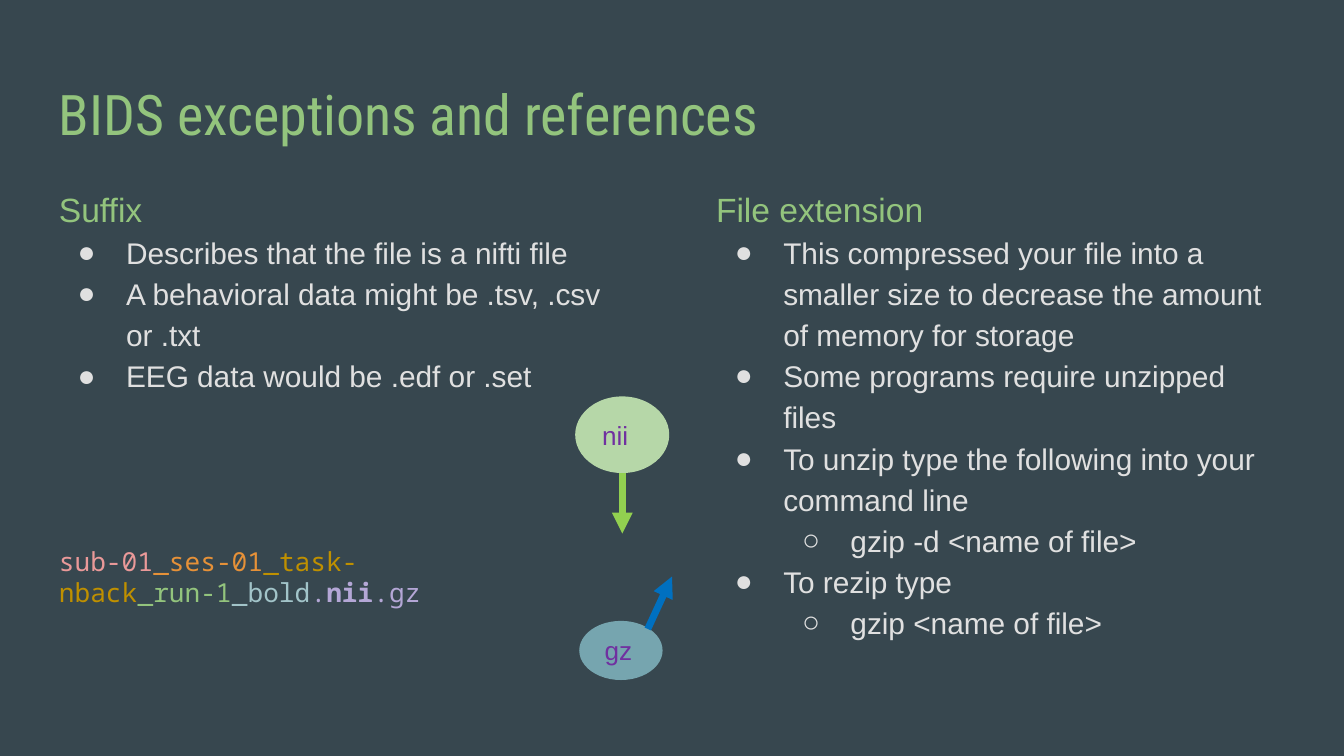
from lxml import etree
from pptx import Presentation
from pptx.dml.color import RGBColor
from pptx.enum.shapes import MSO_CONNECTOR, MSO_SHAPE
from pptx.enum.text import MSO_ANCHOR, PP_ALIGN
from pptx.oxml.ns import qn
from pptx.util import Inches, Pt

COLORS = {
    "background": "37474F", "heading": "93C47D", "body": "E0E0E0",
    "nii": "B6D7A8", "gz": "76A5AF", "label": "7030A0",
    "nii_arrow": "92D050", "gz_arrow": "0070C0",
    "subject": "EA9999", "session": "E69138", "task": "BF9000",
    "run": "93C47D", "suffix": "A2C4C9", "extension": "B4A7D6",
}


def style(font, size, color, name="Arial"):
    font.size = Pt(size)
    font.name = name
    font.color.rgb = RGBColor.from_string(COLORS[color])


def add_text_frame(left, top, width, height, margin=0.1):
    box = slide.shapes.add_textbox(Inches(left), Inches(top), Inches(width), Inches(height))
    frame = box.text_frame
    frame.word_wrap = True
    frame.margin_top = frame.margin_bottom = Inches(margin)
    return frame


prs = Presentation()
prs.slide_width = Inches(10)
prs.slide_height = Inches(10) * 9 // 16
slide = prs.slides.add_slide(prs.slide_layouts[6])
slide.background.fill.solid()
slide.background.fill.fore_color.rgb = RGBColor.from_string(COLORS["background"])

title = add_text_frame(0.34, 0.49, 9.32, 0.63).paragraphs[0]
title.text = "BIDS exceptions and references"
style(title.font, 30, "heading", "Roboto Condensed")

bubbles = [
    ("nii", 4.28, 2.95, 0.7, 0.57, (4.63, 3.52), (4.63, 3.97)),
    ("gz", 4.31, 4.62, 0.62, 0.44, (4.82, 4.68), (5, 4.29)),
]
for wording, left, top, width, height, start, end in bubbles:
    bubble = slide.shapes.add_shape(
        MSO_SHAPE.OVAL, Inches(left), Inches(top), Inches(width), Inches(height))
    bubble.shadow.inherit = False
    bubble.fill.solid()
    bubble.fill.fore_color.rgb = RGBColor.from_string(COLORS[wording])
    bubble.line.fill.background()
    frame = bubble.text_frame
    frame.margin_top = frame.margin_bottom = Inches(0.1)
    frame.vertical_anchor = MSO_ANCHOR.MIDDLE
    label = frame.paragraphs[0]
    label.text = wording
    label.alignment = PP_ALIGN.LEFT
    style(label.font, 14, "label")

    arrow = slide.shapes.add_connector(
        MSO_CONNECTOR.STRAIGHT, *(Inches(value) for value in start + end))
    arrow.line.width = Pt(3.75)
    arrow.line.color.rgb = RGBColor.from_string(COLORS[wording + "_arrow"])
    outline = arrow._element.spPr.find(qn("a:ln"))
    etree.SubElement(outline, qn("a:tailEnd"), type="triangle")
    etree.SubElement(arrow._element.spPr, qn("a:effectLst"))

filename = add_text_frame(0.34, 4.01, 5.01, 0.57, margin=0.05).paragraphs[0]
for wording, part, bold in [
    ("sub-01", "subject", False), ("_ses-01", "session", False),
    ("_task-nback", "task", False), ("_run-1", "run", False),
    ("_bold", "suffix", False), (".", "extension", False),
    ("nii", "extension", True), (".gz", "extension", False),
]:
    entity = filename.add_run()
    entity.text = wording
    entity.font.bold = bold
    style(entity.font, 14, part, "Noto Sans Mono")

columns = [
    (5.23, 4.43, 3.74, "File extension", [
        (0, "This compressed your file into a smaller size to decrease the amount of memory for storage"),
        (0, "Some programs require unzipped files"),
        (0, "To unzip type the following into your command line"),
        (1, "gzip -d <name of file>"),
        (0, "To rezip type"),
        (1, "gzip <name of file>"),
    ]),
    (0.34, 4.37, 1.95, "Suffix", [
        (0, "Describes that the file is a nifti file"),
        (0, "A behavioral data might be .tsv, .csv or .txt"),
        (0, "EEG data would be .edf or .set"),
    ]),
]
for left, width, height, heading_text, points in columns:
    column = add_text_frame(left, 1.26, width, height)
    heading = column.paragraphs[0]
    heading.text = heading_text
    heading.line_spacing = 1.15
    style(heading.font, 18, "heading")
    for level, wording in points:
        point = column.add_paragraph()
        point.text = wording
        point.level = level
        point.line_spacing = 1.15
        style(point.font, 16, "body")
        properties = point._p.get_or_add_pPr()
        properties.set("marL", str(Inches(0.5 * (level + 1))))
        properties.set("indent", str(Inches(-0.36)))
        bullet_color = etree.Element(qn("a:buClr"))
        etree.SubElement(bullet_color, qn("a:srgbClr"), val=COLORS["body"])
        for bullet_part in (
            bullet_color,
            etree.Element(qn("a:buSzPts"), val="1600"),
            etree.Element(qn("a:buFont"), typeface="Arial"),
            etree.Element(qn("a:buChar"), char="●○"[level]),
        ):
            properties.insert_element_before(bullet_part, "a:tabLst", "a:defRPr", "a:extLst")

prs.save("out.pptx")
